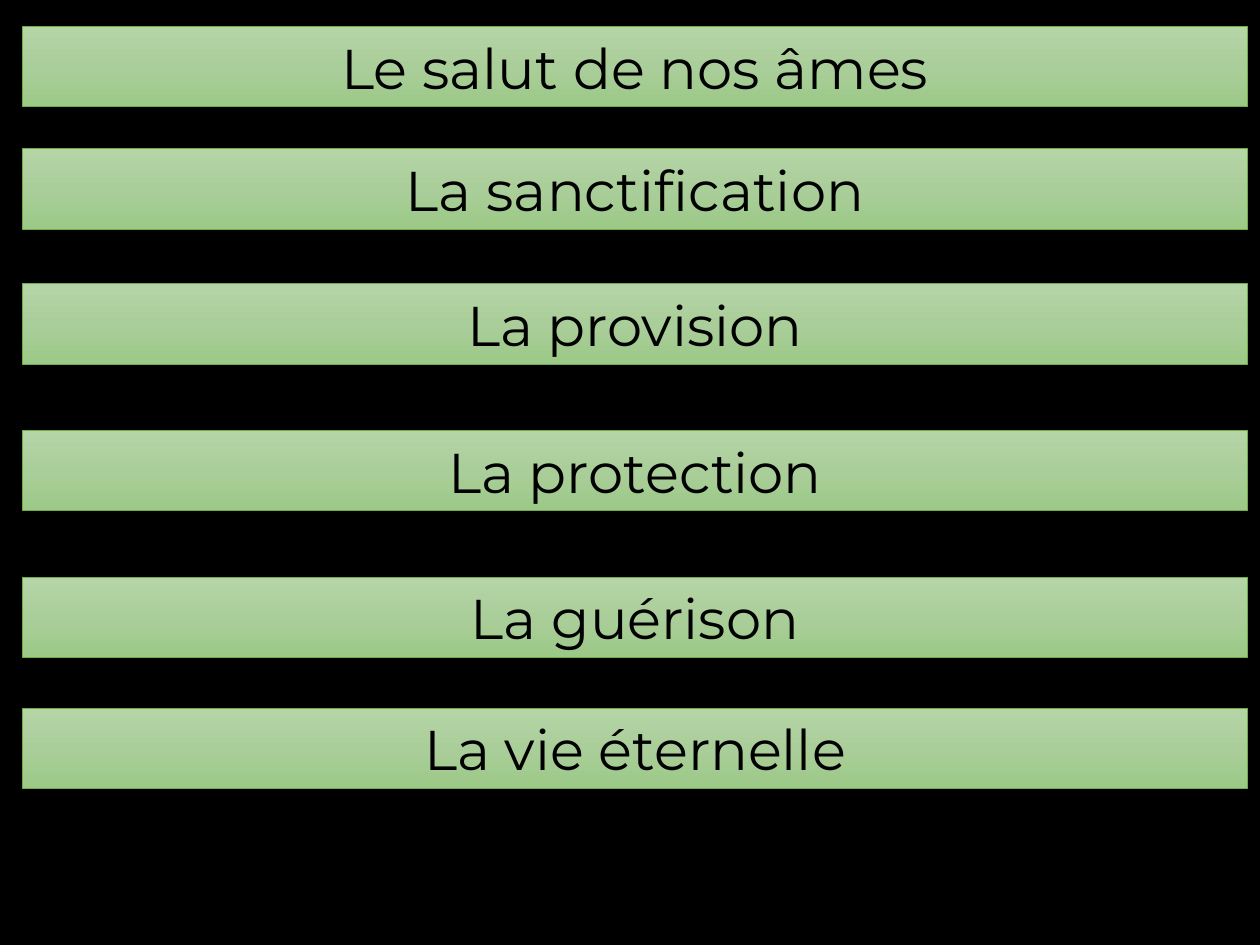
from copy import deepcopy

from pptx import Presentation
from pptx.dml.color import RGBColor
from pptx.enum.shapes import MSO_SHAPE
from pptx.enum.text import MSO_ANCHOR, MSO_AUTO_SIZE, PP_ALIGN
from pptx.oxml.ns import qn
from pptx.util import Pt

RECTANGLE = MSO_SHAPE.RECTANGLE
CENTER = PP_ALIGN.CENTER
MIDDLE = MSO_ANCHOR.MIDDLE
GROW = MSO_AUTO_SIZE.SHAPE_TO_FIT_TEXT

BLACK = RGBColor(0x00, 0x00, 0x00)
GREEN_LINE = RGBColor(0x70, 0xAD, 0x47)
GREEN_STOPS = [
    (0, RGBColor(0xB5, 0xD5, 0xA7)),
    (0.5, RGBColor(0xAA, 0xCE, 0x9A)),
    (1, RGBColor(0x9C, 0xC9, 0x87)),
]

BLESSINGS = [
    ("Le salut de nos âmes", 15.1),
    ("La sanctification", 85),
    ("La provision", 162),
    ("La protection", 246),
    ("La guérison", 329.8),
    ("La vie éternelle", 404.6),
]
BAR_LEFT, BAR_WIDTH, BAR_HEIGHT = 13, 700, 46


def write_text(shape, text, size, font, color, align):
    frame = shape.text_frame
    frame.word_wrap = True
    frame.auto_size = GROW
    frame.vertical_anchor = MIDDLE
    paragraph = frame.paragraphs[0]
    paragraph.alignment = align
    run = paragraph.add_run()
    run.text = text
    run.font.size = Pt(size)
    run.font.name = font
    run.font.color.rgb = color


def fill_gradient(shape, stops):
    shape.fill.gradient()
    shape.fill.gradient_angle = 270
    stop_list = shape.fill._xPr.find(qn("a:gradFill")).find(qn("a:gsLst"))
    stop_list.insert(1, deepcopy(stop_list[0]))
    for stop, (position, color) in zip(shape.fill.gradient_stops, stops):
        stop.position = position
        stop.color.rgb = color


def add_bar(slide, blessing, top):
    bar = slide.shapes.add_shape(
        RECTANGLE, Pt(BAR_LEFT), Pt(top), Pt(BAR_WIDTH), Pt(BAR_HEIGHT)
    )
    bar.shadow.inherit = False
    fill_gradient(bar, GREEN_STOPS)
    bar.line.color.rgb = GREEN_LINE
    bar.line.width = Pt(0.5)
    write_text(bar, blessing, size=32, font="Montserrat", color=BLACK, align=CENTER)


def main():
    deck = Presentation()
    deck.slide_width, deck.slide_height = Pt(720), Pt(540)
    slide = deck.slides.add_slide(deck.slide_layouts[6])
    slide.background.fill.solid()
    slide.background.fill.fore_color.rgb = BLACK
    for blessing, top in BLESSINGS:
        add_bar(slide, blessing, top)
    deck.save("out.pptx")


if __name__ == "__main__":
    main()
